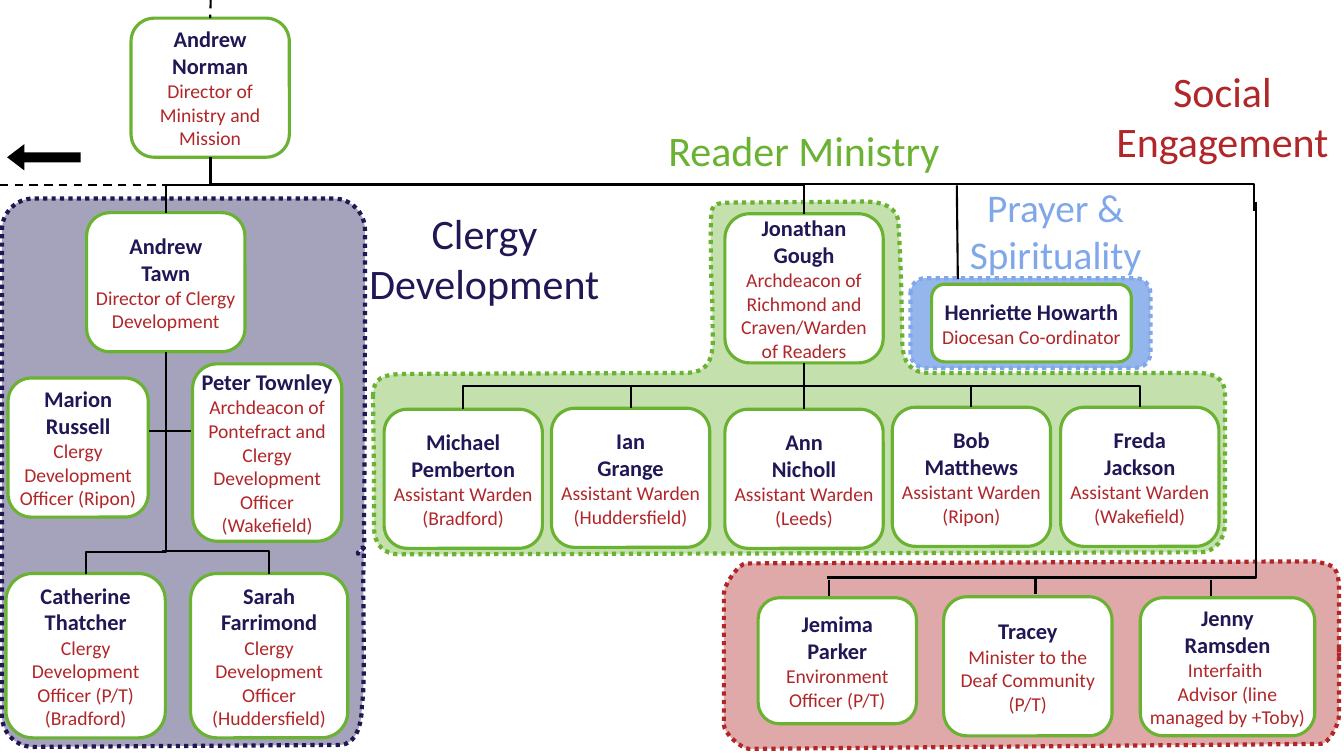
from pptx import Presentation
from pptx.dml.color import RGBColor
from pptx.enum.dml import MSO_LINE
from pptx.enum.shapes import MSO_CONNECTOR, MSO_SHAPE
from pptx.enum.text import MSO_ANCHOR, PP_ALIGN
from pptx.oxml.ns import qn
from pptx.util import Inches, Pt
from lxml import etree

NAVY = RGBColor(0x1F, 0x18, 0x55)
GREEN = RGBColor(0x6A, 0xB2, 0x32)
RED = RGBColor(0xB1, 0x27, 0x29)
BLUE = RGBColor(0x7F, 0xA7, 0xE9)
PALE = RGBColor(0x94, 0xB6, 0xEC)
WHITE = RGBColor(0xFF, 0xFF, 0xFF)
BLACK = RGBColor(0, 0, 0)
DOT, DASH = MSO_LINE.ROUND_DOT, MSO_LINE.DASH
CENTER, MIDDLE = PP_ALIGN.CENTER, MSO_ANCHOR.MIDDLE
CARD, ROUND, ARROW = (MSO_SHAPE.FLOWCHART_ALTERNATE_PROCESS,
                      MSO_SHAPE.ROUNDED_RECTANGLE, MSO_SHAPE.RIGHT_ARROW)
STRAIGHT, ELBOW = MSO_CONNECTOR.STRAIGHT, MSO_CONNECTOR.ELBOW
FONT = "Calibri"

ZONES = [
    (NAVY, [(0.02, 2.28), (0.02, 2.11, 0.16, 1.97, 0.33, 1.97), (3.31, 1.97),
            (3.48, 1.97, 3.62, 2.11, 3.62, 2.28), (3.62, 3.29, 3.62, 4.29, 3.61, 5.3),
            (3.61, 5.4, 3.64, 5.41, 3.57, 5.48), (3.5, 5.55, 3.62, 5.36, 3.61, 5.46),
            (3.59, 5.91, 3.63, 6.74, 3.59, 7), (3.59, 7.17, 3.54, 7.39, 3.37, 7.39),
            (0.33, 7.41), (0.16, 7.41, 0.02, 7.27, 0.02, 7.1)]),
    (GREEN, [(3.7, 3.93), (3.7, 3.76, 3.78, 3.71, 4.03, 3.71), (6.79, 3.7),
             (7.02, 3.7, 7.06, 3.58, 7.07, 3.4), (7.06, 2.41, 7.05, 3.1, 7.05, 2.25),
             (7.06, 2.02, 7.03, 2.01, 7.34, 2.01), (8.57, 2),
             (8.74, 2, 8.91, 2.05, 8.91, 2.22), (8.94, 2.67, 8.94, 2.96, 8.95, 3.43),
             (8.96, 3.58, 9.02, 3.7, 9.22, 3.7), (11.85, 3.7),
             (12.03, 3.7, 12.15, 3.74, 12.15, 3.92), (12.15, 5.18),
             (12.15, 5.35, 12.06, 5.48, 11.89, 5.48), (3.97, 5.5),
             (3.8, 5.5, 3.71, 5.4, 3.71, 5.23), (3.71, 4.23, 3.71, 4.93, 3.7, 3.93)]),
    (RED, [(7.18, 7.19), (7.18, 7.28, 7.36, 7.43, 7.43, 7.43), (13.1, 7.38),
           (13.18, 7.38, 13.28, 7.19, 13.28, 7.1), (13.28, 5.43, 13.28, 7.46, 13.28, 5.79),
           (13.26, 5.6, 13.21, 5.61, 13.05, 5.57), (7.4, 5.59),
           (7.33, 5.59, 7.18, 5.8, 7.18, 5.89)]),
]

STAFF = {
    "norman": (1.3, 0.18, 1.57, 1.38, ["Andrew", "Norman"], ["Director of Ministry and Mission"]),
    "tawn": (0.86, 2.11, 1.57, 1.38, ["Andrew", "Tawn"], ["Director of Clergy Development"]),
    "russell": (0.08, 3.75, 1.39, 1.38, ["Marion Russell"], ["Clergy Development Officer (Ripon)"]),
    "townley": (1.91, 3.61, 1.48, 1.76, ["Peter Townley"],
                ["Archdeacon of Pontefract and Clergy Development Officer (Wakefield)"]),
    "thatcher": (0.06, 5.69, 1.58, 1.63, ["Catherine", "Thatcher"],
                 ["Clergy Development Officer (P/T) (Bradford)"]),
    "farrimond": (1.89, 5.69, 1.56, 1.63, ["Sarah", "Farrimond"],
                  ["Clergy Development Officer", "(Huddersfield)"]),
    "gough": (7.19, 2.12, 1.57, 1.48, ["Jonathan Gough"],
              ["Archdeacon of Richmond and Craven/Warden of Readers"]),
    "howarth": (9.24, 2.82, 1.98, 0.77, ["Henriette Howarth"], ["Diocesan Co-ordinator"]),
    "pemberton": (3.81, 4.06, 1.57, 1.38, ["Michael Pemberton"], ["Assistant Warden (Bradford)"]),
    "grange": (5.47, 4.05, 1.57, 1.38, ["Ian", "Grange"], ["Assistant Warden (Huddersfield)"]),
    "nicholl": (7.19, 4.06, 1.57, 1.38, ["Ann", "Nicholl"], ["Assistant Warden (Leeds)"]),
    "matthews": (8.85, 4.04, 1.57, 1.38, ["Bob", "Matthews"], ["Assistant Warden (Ripon)"]),
    "jackson": (10.52, 4.04, 1.57, 1.38, ["Freda", "Jackson"], ["Assistant Warden (Wakefield)"]),
    "parker": (7.52, 5.93, 1.57, 1.25, ["Jemima", "Parker"], ["Environment Officer (P/T)"]),
    "tracey": (9.36, 5.92, 1.67, 1.38, ["Tracey"], ["Minister to the Deaf Community (P/T)"]),
    "ramsden": (11.31, 5.93, 1.73, 1.37, ["Jenny", "Ramsden"],
                ["Interfaith ", "Advisor (line managed by +Toby)"]),
}

LABELS = [
    (9.95, 0.6, 4.35, 1.11, ["Social", "Engagement"], 30, RED, None),
    (5.8, 1.19, 4.35, 0.61, ["Reader Ministry"], 30, GREEN, None),
    (2.63, 2.01, 4.35, 1.11, ["Clergy", "Development"], 30, NAVY, None),
    (9.41, 1.78, 2.12, 1.03, ["Prayer & Spirituality"], 28, BLUE, 0.04),
]

DROPS = [("norman", "tawn", 50), ("norman", "gough", 50),
         ("gough", "pemberton", 50), ("gough", "grange", 51.4),
         ("gough", "matthews", 51.8), ("gough", "jackson", 52.3),
         ("tawn", "thatcher", 90.3)]
SOCIAL = (2.09, 1.56, 12.44, 2.09)
CORNERS = [(0, 1.84, 2.09, 1.56, DASH), (1.61, 5.47, 2.67, 5.69, None),
           (8.2, 5.73, 12.46, 3.61, None)]
LINES = [(1.48, 4.28, 1.89, 4.28), (9.49, 1.84, 9.5, 2.77), (12.46, 2, 12.46, 3.65),
         (8.22, 5.75, 8.22, 5.91), (10.27, 5.73, 10.27, 5.89), (12.01, 5.75, 12.01, 5.91)]

deck = Presentation()
deck.slide_width, deck.slide_height = Inches(13.33), Inches(7.5)
slide = deck.slides.add_slide(deck.slide_layouts[6])
shapes = slide.shapes


def paint(shape, fill, line, width, dash=None):
    shape.shadow.inherit = False
    if fill is None:
        shape.fill.background()
    else:
        shape.fill.solid()
        shape.fill.fore_color.rgb = fill
    shape.line.color.rgb = line
    shape.line.width = Pt(width)
    if dash:
        shape.line.dash_style = dash


def write(frame, rows, pad=None):
    frame.word_wrap = True
    if pad is not None:
        for side in ("left", "top", "right", "bottom"):
            setattr(frame, "margin_" + side, Inches(pad))
    for i, (text, size, color, bold) in enumerate(rows):
        para = frame.paragraphs[0] if i == 0 else frame.add_paragraph()
        para.alignment = CENTER
        run = para.add_run()
        run.text = text
        run.font.color.rgb = color
        for key, value in {"name": FONT, "size": Pt(size), "bold": bold}.items():
            setattr(run.font, key, value)


def outline(steps):
    grid = [[round(v * 100) for v in step] for step in steps]
    ends = [step[-2:] for step in grid]
    pen = shapes.build_freeform(*ends[0], scale=Inches(0.01))
    pen.add_line_segments(ends[1:], close=True)
    shape = pen.convert_to_shape()
    left, top = (min(axis) for axis in zip(*ends))
    sides = list(shape._element.spPr.iter(qn("a:lnTo")))
    for side, step in zip(sides, grid[1:]):
        if len(step) == 6:
            curve = etree.Element(qn("a:cubicBezTo"))
            for x, y in zip(step[::2], step[1::2]):
                etree.SubElement(curve, qn("a:pt"), x=str(x - left), y=str(y - top))
            side.getparent().replace(side, curve)
    return shape


def wire(kind, x1, y1, x2, y2, dash=None):
    link = shapes.add_connector(kind, *map(Inches, (x1, y1, x2, y2)))
    link.line.color.rgb = BLACK
    link.line.width = Pt(1.5)
    if dash:
        link.line.dash_style = dash
    etree.SubElement(link._element.spPr, qn("a:effectLst"))
    return link


def drop(x1, y1, x2, y2, bend=50):
    mx, my = (x1 + x2) / 2, (y1 + y2) / 2
    dx, dy = (x2 - x1) / 2, (y2 - y1) / 2
    props = wire(ELBOW, mx - dy, my + dx, mx + dy, my - dx)._element.spPr
    props.find(qn("a:xfrm")).set("rot", "5400000")
    geom = props.find(qn("a:prstGeom"))
    guides = geom.find(qn("a:avLst"))
    if guides is None:
        guides = etree.SubElement(geom, qn("a:avLst"))
    etree.SubElement(guides, qn("a:gd"), name="adj1", fmla=f"val {round(bend * 1000)}")


prayer = shapes.add_shape(ROUND, *map(Inches, (9.03, 2.76, 2.38, 0.89)))
paint(prayer, PALE, BLUE, 3, DOT)

for color, steps in ZONES:
    zone = outline(steps)
    paint(zone, color, color, 3, DOT)
    tint = zone._element.spPr.find(qn("a:solidFill")).find(qn("a:srgbClr"))
    etree.SubElement(tint, qn("a:alpha"), val="40000")

cards = {}
for key, (x, y, w, h, names, roles) in STAFF.items():
    card = cards[key] = shapes.add_shape(CARD, *map(Inches, (x, y, w, h)))
    paint(card, None if key == "norman" else WHITE, GREEN, 2.25)
    card.text_frame.vertical_anchor = MIDDLE
    write(card.text_frame, [(n, 16, NAVY, True) for n in names]
          + [(r, 14, RED, False) for r in roles], 0)

for top, low, bend in DROPS:
    x, y, w, h = STAFF[top][:4]
    left, head, wide = STAFF[low][:3]
    drop(x + w / 2, y + h, left + wide / 2, head, bend)
drop(*SOCIAL)
for *ends, dash in CORNERS:
    corner = wire(ELBOW, *ends, dash)
    corner._element.spPr.find(qn("a:prstGeom")).set("prst", "bentConnector2")
for ends in LINES:
    wire(STRAIGHT, *ends)
stem = wire(STRAIGHT, 2.09, 0, 2.09, 0.18, DASH)
stem.end_connect(cards["norman"], 0)
trunk = wire(STRAIGHT, 7.98, 3.6, 7.98, 4.06)
trunk.begin_connect(cards["gough"], 2)
trunk.end_connect(cards["nicholl"], 0)

for x, y, w, h, texts, size, color, pad in LABELS:
    label = shapes.add_textbox(*map(Inches, (x, y, w, h)))
    write(label.text_frame, [(t, size, color, False) for t in texts], pad)

arrow = shapes.add_shape(ARROW, *map(Inches, (0.07, 1.43, 0.73, 0.26)))
paint(arrow, BLACK, BLACK, 0)
arrow.line.fill.background()
arrow.rotation = 180
arrow.adjustments[0], arrow.adjustments[1] = 0.38, 0.655

deck.save("out.pptx")
